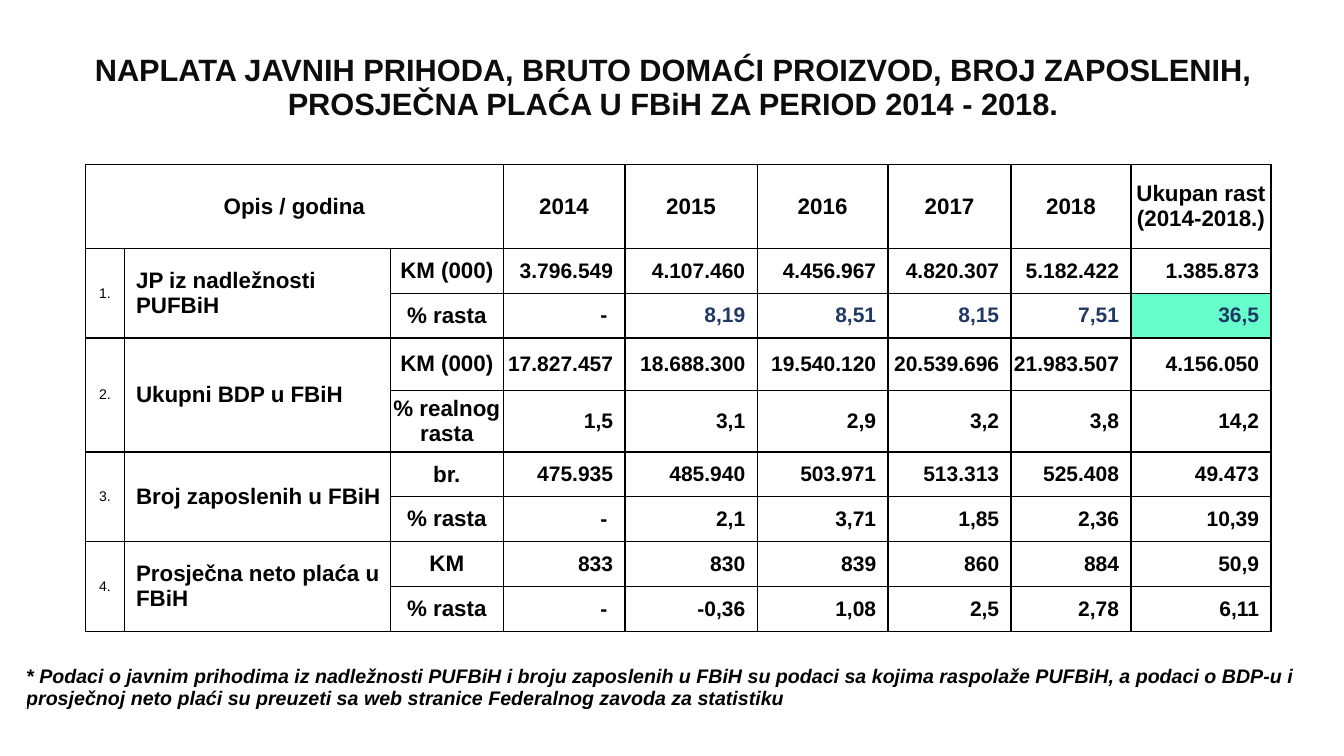
from lxml import etree
from pptx import Presentation
from pptx.dml.color import RGBColor
from pptx.enum.text import MSO_ANCHOR, MSO_AUTO_SIZE, PP_ALIGN
from pptx.oxml.ns import qn
from pptx.util import Cm, Pt

LEFT, CENTER, RIGHT = PP_ALIGN.LEFT, PP_ALIGN.CENTER, PP_ALIGN.RIGHT
MIDDLE, BOTTOM = MSO_ANCHOR.MIDDLE, MSO_ANCHOR.BOTTOM
NO_AUTOFIT = MSO_AUTO_SIZE.NONE

BLACK = RGBColor(0x00, 0x00, 0x00)
WHITE = RGBColor(0xFF, 0xFF, 0xFF)
TITLE_INK = RGBColor(0x0D, 0x0D, 0x0D)
NAVY = RGBColor(0x20, 0x38, 0x64)
MINT = RGBColor(0x66, 0xFF, 0xCC)

INDENT = 0.3
COLUMN_WIDTHS = [0.97, 6.71, 2.84, 3.07, 3.33, 3.3, 3.1, 3.02, 3.53]
ROW_HEIGHTS = [2.11, 1.13, 1.13, 1.32, 1.55, 1.13, 1.13, 1.13, 1.13]

TITLE = ("NAPLATA JAVNIH PRIHODA, BRUTO DOMAĆI PROIZVOD, BROJ ZAPOSLENIH,\n"
         "PROSJEČNA PLAĆA U FBiH ZA PERIOD 2014 - 2018.")
HEADINGS = ["2014", "2015", "2016", "2017", "2018", "Ukupan rast (2014-2018.)"]
# Each indicator: name, then two measures with their values
INDICATORS = [
    ("JP iz nadležnosti PUFBiH",
     ("KM (000)", ["3.796.549", "4.107.460", "4.456.967", "4.820.307", "5.182.422", "1.385.873"]),
     ("% rasta", ["- ", "8,19", "8,51", "8,15", "7,51", "36,5"])),
    ("Ukupni BDP u FBiH",
     ("KM (000)", ["17.827.457", "18.688.300", "19.540.120", "20.539.696", "21.983.507", "4.156.050"]),
     ("% realnog rasta", ["1,5", "3,1", "2,9", "3,2", "3,8", "14,2"])),
    ("Broj zaposlenih u FBiH",
     ("br.", ["475.935", "485.940", "503.971", "513.313", "525.408", "49.473"]),
     ("% rasta", ["- ", "2,1", "3,71", "1,85", "2,36", "10,39"])),
    ("Prosječna neto plaća u FBiH",
     ("KM", ["833", "830", "839", "860", "884", "50,9"]),
     ("% rasta", ["- ", "-0,36", "1,08", "2,5", "2,78", "6,11"])),
]
FOOTNOTE = ("* Podaci o javnim prihodima iz nadležnosti PUFBiH i broju zaposlenih u FBiH su podaci "
            "sa kojima raspolaže PUFBiH, a podaci o BDP-u i prosječnoj neto plaći su preuzeti sa "
            "web stranice Federalnog zavoda za statistiku")


class SlideBuilder:
    font_name = "Arial"

    def __init__(self, slide):
        self.slide = slide

    def style(self, paragraph, size, color=BLACK, align=CENTER, bold=True, italic=False):
        paragraph.alignment = align
        font = paragraph.font
        font.name, font.size, font.bold, font.italic = self.font_name, Pt(size), bold, italic
        font.color.rgb = color

    def title(self, text, left, top, width, height):
        heading = self.slide.shapes.title
        heading.left, heading.top = Cm(left), Cm(top)
        heading.width, heading.height = Cm(width), Cm(height)
        frame = heading.text_frame
        frame.auto_size, frame.word_wrap, frame.vertical_anchor = NO_AUTOFIT, True, MIDDLE
        paragraph = frame.paragraphs[0]
        paragraph.text = text
        paragraph.line_spacing = 0.9
        self.style(paragraph, 22, TITLE_INK)

    def table(self, left, top, widths, heights):
        table = self.slide.shapes.add_table(
            len(heights), len(widths), Cm(left), Cm(top),
            Cm(sum(widths)), Cm(sum(heights))).table
        table.first_row = table.horz_banding = False
        for column, width in zip(table.columns, widths):
            column.width = Cm(width)
        for row, height in zip(table.rows, heights):
            row.height = Cm(height)
        for cell in table.iter_cells():
            cell.margin_left = cell.margin_right = cell.margin_top = cell.margin_bottom = 0
            cell.fill.background()
            self.style(cell.text_frame.paragraphs[0], 10)
        return table

    def grid(self, table):
        for cell in table.iter_cells():
            properties = cell._tc.get_or_add_tcPr()
            for position, side in enumerate(("a:lnL", "a:lnR", "a:lnT", "a:lnB")):
                line = etree.Element(qn(side), w=str(Pt(1)))
                solid = etree.SubElement(line, qn("a:solidFill"))
                etree.SubElement(solid, qn("a:srgbClr"), val=str(BLACK))
                properties.insert(position, line)
            cell.fill.solid()
            cell.fill.fore_color.rgb = WHITE

    def cell(self, cell, text, size=16, anchor=MIDDLE, **style):
        cell.vertical_anchor = anchor
        paragraph = cell.text_frame.paragraphs[0]
        paragraph.text = text
        self.style(paragraph, size, **style)


def main():
    presentation = Presentation()
    presentation.slide_width, presentation.slide_height = Cm(33.87), Cm(19.05)
    builder = SlideBuilder(presentation.slides.add_slide(presentation.slide_layouts[5]))

    builder.title(TITLE, 0.66, 0.33, 32.6, 3.8)

    # Header row of the indicators table
    indicators = builder.table(2.16, 4.15, COLUMN_WIDTHS, ROW_HEIGHTS)
    builder.grid(indicators)
    indicators.cell(0, 0).merge(indicators.cell(0, 2))
    builder.cell(indicators.cell(0, 0), "Opis / godina")
    for column, heading in enumerate(HEADINGS, 3):
        builder.cell(indicators.cell(0, column), heading)

    # Two rows for each indicator
    for number, (name, *measures) in enumerate(INDICATORS, 1):
        first_row = 2 * number - 1
        for column in (0, 1):
            indicators.cell(first_row, column).merge(indicators.cell(first_row + 1, column))
        builder.cell(indicators.cell(first_row, 0), f"{number}.", 10, bold=False)
        name_cell = indicators.cell(first_row, 1)
        name_cell.margin_left = Cm(INDENT)
        builder.cell(name_cell, name, align=LEFT)
        for row, (measure, values) in enumerate(measures, first_row):
            builder.cell(indicators.cell(row, 2), measure)
            for column, value in enumerate(values, 3):
                value_cell = indicators.cell(row, column)
                value_cell.margin_right = Cm(INDENT)
                color = NAVY if row == 2 and column > 3 else BLACK
                builder.cell(value_cell, value, 15, align=RIGHT, color=color)

    # Highlighted total growth of public revenue
    indicators.cell(2, 8).fill.fore_color.rgb = MINT

    # Footnote on the sources
    sources = builder.table(0.66, 16.69, [32.16, 0.43], [1.19, 0.71])
    sources.cell(1, 0).merge(sources.cell(1, 1))
    builder.cell(sources.cell(0, 0), FOOTNOTE, 14, BOTTOM, align=LEFT, italic=True)

    presentation.save("out.pptx")


if __name__ == "__main__":
    main()
